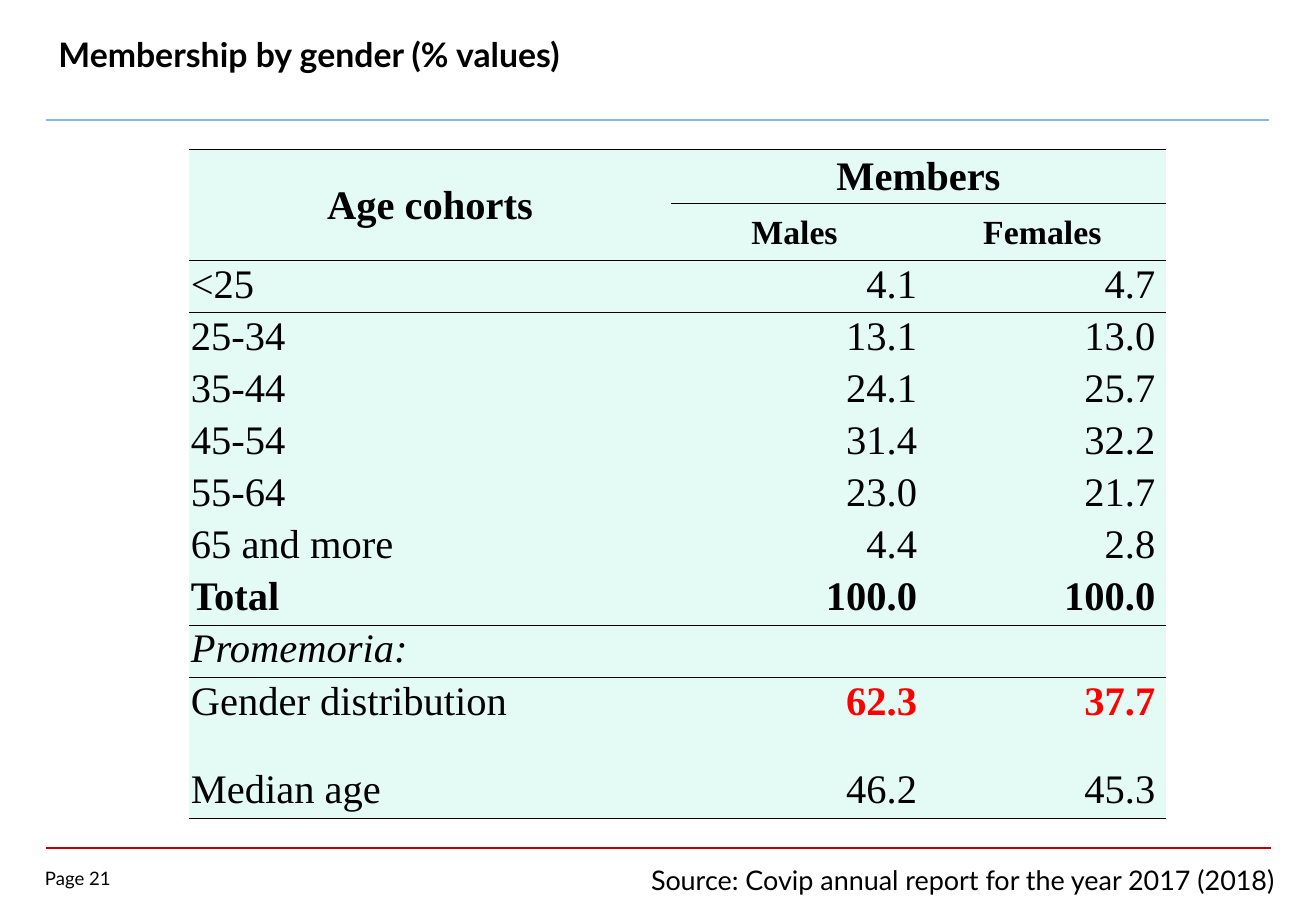
from pptx import Presentation
from pptx.util import Cm, Pt
from pptx.dml.color import RGBColor
from pptx.enum.shapes import MSO_CONNECTOR
from pptx.enum.text import PP_ALIGN, MSO_ANCHOR
from pptx.oxml.ns import qn
from lxml.etree import SubElement

COLORS = {"black": "000000", "red": "FF0000", "mint": "E4FAF4",
          "blue": "8EB4E3", "wine": "C00000"}
PLAIN = "{2D5ABB26-0587-4C30-8999-92F81FD0307C}"  # table style without lines


def style(para, face, size, color="black", bold=False, slant=False):
    for run in para.runs:
        font = run.font
        font.name, font.size = face, Pt(size)
        font.bold, font.italic = bold, slant
        font.color.rgb = RGBColor.from_string(COLORS[color])


def border(cell, side):
    line = SubElement(cell._tc.get_or_add_tcPr(), qn("a:" + side), w="6350")
    fill = SubElement(line, qn("a:solidFill"))
    SubElement(fill, qn("a:srgbClr"), val=COLORS["black"])


deck = Presentation()
deck.slide_width, deck.slide_height = Cm(27.51), Cm(19.05)
slide = deck.slides.add_slide(deck.slide_layouts[6])

# Rules above and below the table
for right, y, color, width in [(26.57, 17.73, "wine", 1), (26.52, 2.51, "blue", 1.5)]:
    rule = slide.shapes.add_connector(MSO_CONNECTOR.STRAIGHT, Cm(0.97), Cm(y), Cm(right), Cm(y))
    rule.line.color.rgb = RGBColor.from_string(COLORS[color])
    rule.line.width = Pt(width)
    SubElement(rule._element.spPr, qn("a:effectLst"))

# Page number, title and source: text, box, size, bold, inset
texts = [
    ("Page 21", (0.94, 18.14, 1.85, 0.56), 11, False, (0, 0)),
    ("Membership by gender (% values)", (0.97, 0.23, 25.2, 1.8), 20, True, (0.25, 0.13)),
    ("Source: Covip annual report for the year 2017 (2018)",
     (13.36, 17.93, 14.4, 0.94), 16, False, (0.25, 0.13)),
]
for text, place, size, bold, (side, edge) in texts:
    frame = slide.shapes.add_textbox(*map(Cm, place)).text_frame
    frame.word_wrap = True
    frame.margin_left = frame.margin_right = Cm(side)
    frame.margin_top = frame.margin_bottom = Cm(edge)
    frame.vertical_anchor = MSO_ANCHOR.MIDDLE if bold else MSO_ANCHOR.TOP
    frame.text = text
    style(frame.paragraphs[0], "Lato", size, bold=bold)

# Table grid
rows = [
    ("Age cohorts", "Members", ""),
    ("", "Males", "Females"),
    ("<25", "4.1", "4.7"),
    ("25-34", "13.1", "13.0"),
    ("35-44", "24.1", "25.7"),
    ("45-54", "31.4", "32.2"),
    ("55-64", "23.0", "21.7"),
    ("65 and more", "4.4", "2.8"),
    ("Total", "100.0", "100.0"),
    ("Promemoria:", "", ""),
    ("Gender distribution", "62.3", "37.7"),
    ("Median age", "46.2", "45.3"),
]
widths = [10.06, 5.18, 5.18]
heights = [1.14, 1.19] + [1.09] * 8 + [1.85, 1.09]
table = slide.shapes.add_table(len(rows), 3, Cm(3.96), Cm(3.12),
                               Cm(sum(widths)), Cm(sum(heights))).table
table.first_row = table.horz_banding = False
table._tbl.tblPr.find(qn("a:tableStyleId")).text = PLAIN
for col, width in zip(table.columns, widths):
    col.width = Cm(width)
for row, height in zip(table.rows, heights):
    row.height = Cm(height)
table.cell(0, 0).merge(table.cell(1, 0))
table.cell(0, 1).merge(table.cell(0, 2))

# Table cells
for r, row in enumerate(rows):
    for c, text in enumerate(row):
        cell = table.cell(r, c)
        head = r < 2
        cell.margin_left = cell.margin_top = Cm(0.03)
        cell.margin_right = Cm(0.23 if c == 2 and not head else 0.03)
        cell.margin_bottom = 0
        cell.vertical_anchor = MSO_ANCHOR.MIDDLE if head else MSO_ANCHOR.TOP
        if r in (0, 1, 2, 9) and (r, c) != (1, 0):
            border(cell, "lnT")
        if r in (0, 1, 8, 11):
            border(cell, "lnB")
        cell.fill.solid()
        cell.fill.fore_color.rgb = RGBColor.from_string(COLORS["mint"])
        if text:
            cell.text_frame.text = text
            para = cell.text_frame.paragraphs[0]
            if head:
                para.alignment = PP_ALIGN.CENTER
            elif c:
                para.alignment = PP_ALIGN.RIGHT
            share = r == 10 and c > 0
            style(para, "Times New Roman", 20 if r == 1 else 24,
                  "red" if share else "black",
                  head or r == 8 or share, r == 9)

deck.save("out.pptx")
